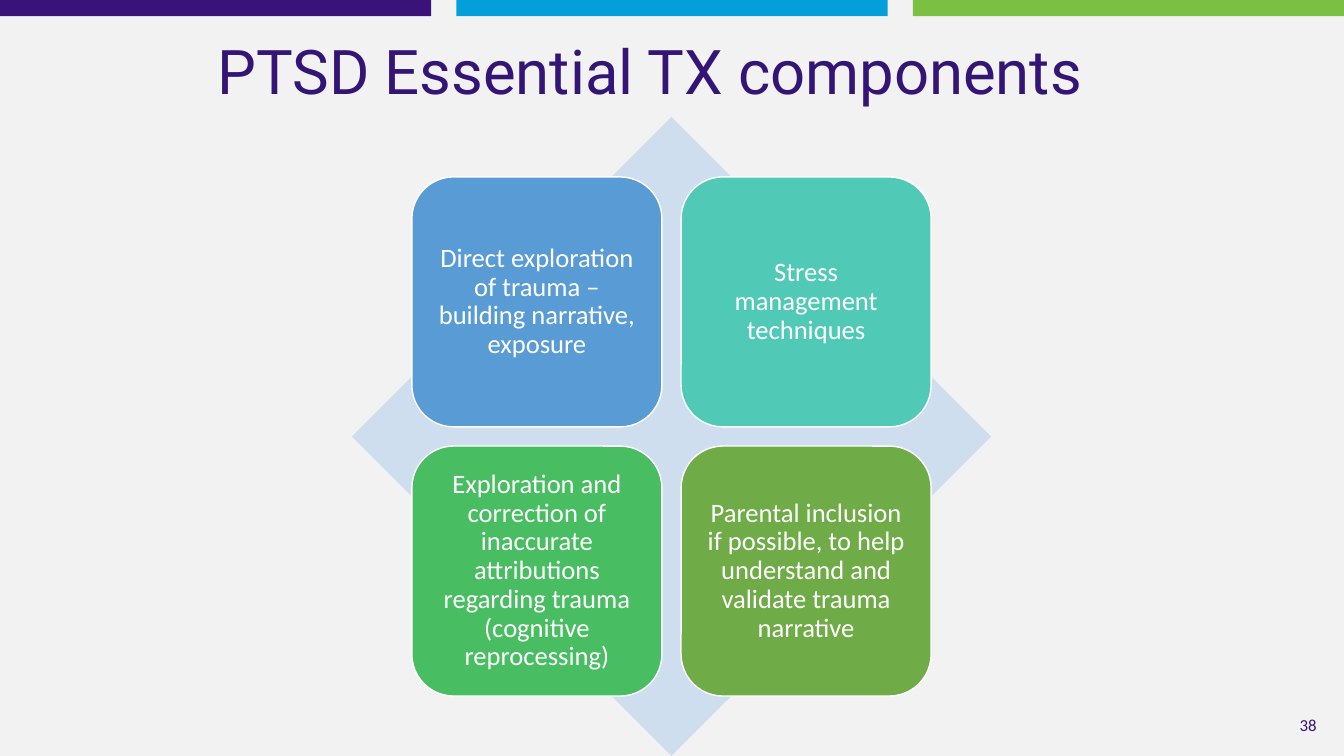
from pptx import Presentation
from pptx.dml.color import RGBColor
from pptx.enum import shapes, text
from pptx.util import Inches, Pt

COLORS = {
    "background": "F2F2F2", "purple": "391378", "blue": "049FDA", "lime": "7BBF43",
    "title": "341575", "diamond": "CFDEEF", "white": "FFFFFF",
    "exploration": "599BD5", "stress": "50C9B6", "correction": "48BD62", "parents": "6FAB46",
}
COMPONENTS = [
    ("Direct exploration of trauma – building narrative, exposure", "exploration"),
    ("Stress management techniques", "stress"),
    ("Exploration and correction of inaccurate attributions regarding trauma "
     "(cognitive reprocessing)", "correction"),
    ("Parental inclusion if possible, to help understand and validate trauma narrative",
     "parents"),
]


def rgb(name):
    return RGBColor.from_string(COLORS[name])


def add_block(s, kind, box, fill):
    sp = s.shapes.add_shape(kind, *map(Inches, box))
    sp.shadow.inherit = False
    sp.fill.solid()
    sp.fill.fore_color.rgb = rgb(fill)
    sp.line.fill.background()
    return sp


def write(sp, words, size, font, color, align, inset, spacing=0.9, wrap=True):
    tf = sp.text_frame
    tf.word_wrap = wrap
    tf.vertical_anchor = text.MSO_ANCHOR.MIDDLE
    tf.margin_left = tf.margin_right = tf.margin_top = tf.margin_bottom = Inches(inset)
    p = tf.paragraphs[0]
    p.text = words
    p.alignment = align
    p.line_spacing = spacing
    p.font.size = Pt(size)
    p.font.name = font
    p.font.color.rgb = rgb(color)
    return tf


def add_top_bars(s, left, top, width, height):
    gap = 0.25
    bar = (width - 2 * gap) / 3
    for i, color in enumerate(("purple", "blue", "lime")):
        box = (left + i * (bar + gap), top, bar, height)
        add_block(s, shapes.MSO_SHAPE.RECTANGLE, box, color)


def add_title(s, left, top, width, height):
    sp = s.shapes.add_textbox(*map(Inches, (left, top, width, height)))
    tf = write(sp, "PTSD Essential TX components", 44, "Roboto", "title",
               text.PP_ALIGN.CENTER, 0.05)
    tf.margin_right = Inches(0.48)  # the title sits a little left of centre


def add_matrix(s, left, top, size):
    add_block(s, shapes.MSO_SHAPE.DIAMOND, (left, top, size, size), "diamond")
    # Four tiles, centred on the diamond
    tile, gap = 2.48, 0.19
    margin = (size - 2 * tile - gap) / 2
    for i, (words, color) in enumerate(COMPONENTS):
        row, col = divmod(i, 2)
        box = (left + margin + col * (tile + gap), top + margin + row * (tile + gap),
               tile, tile)
        sp = add_block(s, shapes.MSO_SHAPE.ROUNDED_RECTANGLE, box, color)
        sp.adjustments[0] = 0.167
        sp.line.color.rgb = rgb("white")
        sp.line.width = Pt(1)
        write(sp, words, 19, "Calibri", "white", text.PP_ALIGN.CENTER, 0.08)


def add_page_number(s, left, top, width, height):
    sp = s.shapes.add_textbox(*map(Inches, (left, top, width, height)))
    write(sp, "38", 12, "Calibri", "purple", text.PP_ALIGN.RIGHT, 0.05,
          spacing=1.0, wrap=False)


def main():
    prs = Presentation()
    prs.slide_width, prs.slide_height = Inches(13.33), Inches(7.5)
    s = prs.slides.add_slide(prs.slide_layouts[6])
    s.background.fill.solid()
    s.background.fill.fore_color.rgb = rgb("background")
    add_top_bars(s, 0, 0, 13.33, 0.16)
    add_page_number(s, 12.83, 7.06, 0.28, 0.27)
    add_title(s, 0, 0.21, 13.33, 1.05)
    add_matrix(s, 3.49, 1.16, 6.34)
    prs.save("out.pptx")


if __name__ == "__main__":
    main()
